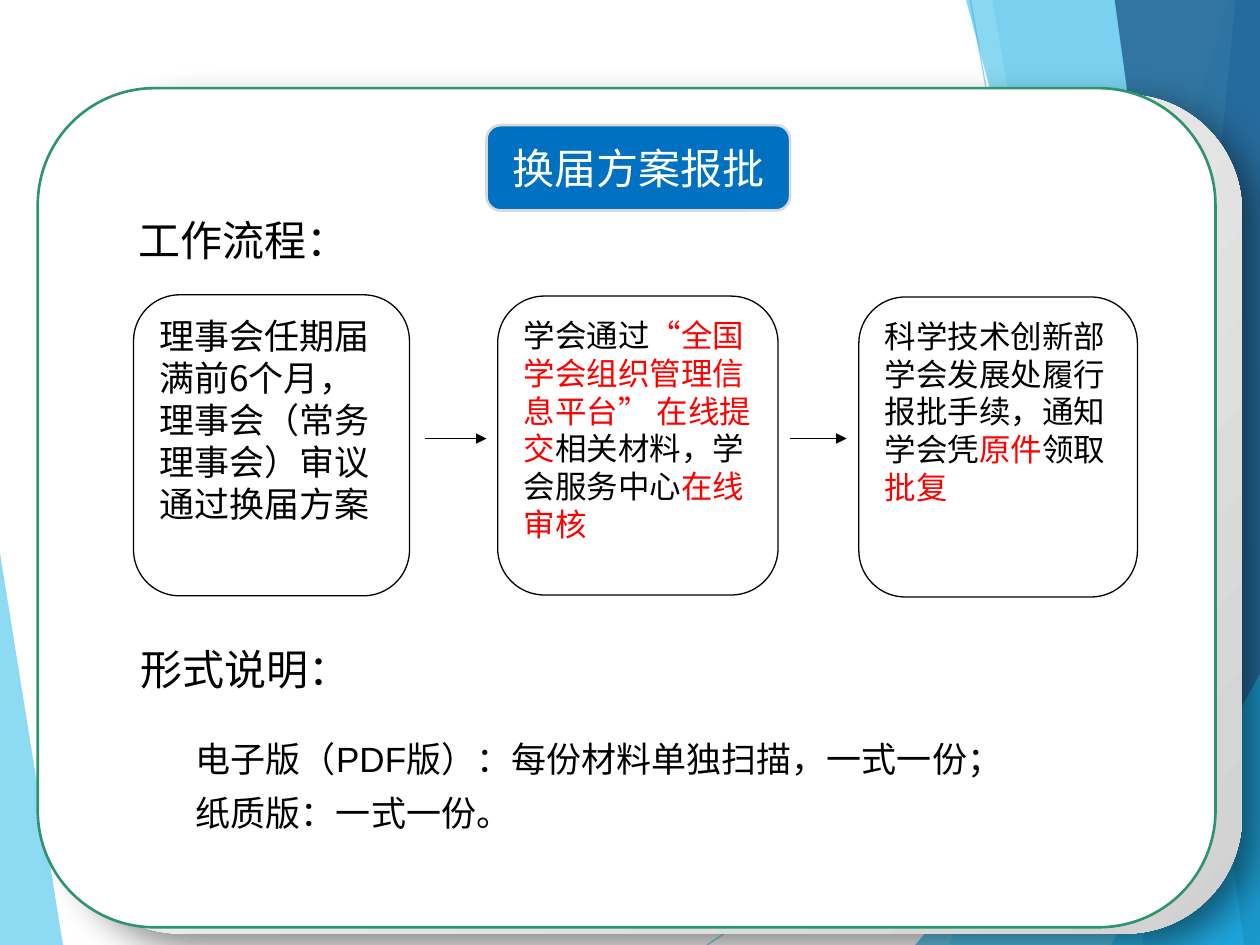
from lxml import etree
from pptx import Presentation
from pptx.dml.color import RGBColor
from pptx.enum.shapes import MSO_CONNECTOR, MSO_SHAPE
from pptx.enum.text import MSO_ANCHOR, MSO_AUTO_SIZE, PP_ALIGN
from pptx.oxml.ns import qn
from pptx.util import Pt

ROUND = MSO_SHAPE.ROUNDED_RECTANGLE
STEP = MSO_SHAPE.FLOWCHART_ALTERNATE_PROCESS
STRAIGHT = MSO_CONNECTOR.STRAIGHT
TOP, MIDDLE = MSO_ANCHOR.TOP, MSO_ANCHOR.MIDDLE
LEFT, CENTER = PP_ALIGN.LEFT, PP_ALIGN.CENTER
GROW = MSO_AUTO_SIZE.SHAPE_TO_FIT_TEXT

WHITE = RGBColor(0xFF, 0xFF, 0xFF)
BLACK = RGBColor(0x00, 0x00, 0x00)
RED = RGBColor(0xFF, 0x00, 0x00)
GREEN = RGBColor(0x2E, 0x94, 0x6B)
TITLE_BLUE = RGBColor(0x00, 0x70, 0xC0)
PALE_GRAY = RGBColor(0xD9, 0xD9, 0xD9)
EDGE_GRAY = RGBColor(0xD1, 0xD1, 0xD1)
SKY = RGBColor(0x5F, 0xCB, 0xEF)
CYAN = RGBColor(0x17, 0xB0, 0xE4)
BLUE = RGBColor(0x2E, 0x83, 0xC3)
NAVY = RGBColor(0x22, 0x62, 0x92)

ARIAL = "Arial"
CJK_SC = "Noto Sans CJK SC"
CJK_JP = "Noto Sans CJK JP"

FACETS = [
    ([(0, 316), (35.5, 540), (0, 540)], SKY, 70),
    ([(702, 0), (543, 540), (720, 540), (720, 0)], SKY, 36),
    ([(567, 0), (662, 540), (720, 540), (720, 0)], SKY, 20),
    ([(523, 540), (720, 309), (720, 540)], CYAN, 66),
    ([(552, 0), (698, 540), (720, 540), (720, 0)], CYAN, 50),
    ([(706, 0), (653, 540), (720, 540), (720, 0)], BLUE, 70),
    ([(637, 0), (711, 540), (720, 540), (720, 0)], NAVY, 82),
    ([(635, 540), (720, 385), (720, 540)], CYAN, 66),
]
RAYS = [((404, 540), (720, 329)), ((554.5, 0), (651, 540))]

STEPS = [
    ((76.3, 168.5, 157.7, 172), CJK_JP, 20,
     [("理事会任期届满前6个月，理事会（常务理事会）审议通过换届方案", BLACK)]),
    ((284.4, 169.2, 160.2, 170.8), ARIAL, 18,
     [("学会通过", BLACK), ("“全国学会组织管理信息平台” 在线提交", RED),
      ("相关材料，学会服务中心", BLACK), ("在线审核", RED)]),
    ((490.8, 169.7, 159.2, 171.4), CJK_JP, 18,
     [("科学技术创新部学会发展处履行报批手续，通知学会凭", BLACK),
      ("原件", RED), ("领取", BLACK), ("批复", RED)]),
]
ARROWS = [(242.6, 278), (451.6, 483.8)]
ARROW_Y = 250.6


class Deck:
    def __init__(self, prs):
        self.s = prs.slides.add_slide(prs.slide_layouts[6])

    def alpha(self, element, percent):
        color = next(element.iter(qn("a:srgbClr")))
        etree.SubElement(color, qn("a:alpha"), val=str(percent * 1000))

    def facet(self, points, color, opacity):
        builder = self.s.shapes.build_freeform(*points[0], scale=Pt(1))
        builder.add_line_segments(points[1:], close=True)
        sp = builder.convert_to_shape()
        sp.shadow.inherit = False
        sp.fill.solid()
        sp.fill.fore_color.rgb = color
        sp.line.fill.background()
        self.alpha(sp._element.spPr, opacity)

    def line(self, start, end, color, opacity=None, arrow=False):
        cxn = self.s.shapes.add_connector(
            STRAIGHT, *(Pt(v) for v in (*start, *end)))
        cxn.line.color.rgb = color
        cxn.line.width = Pt(0.75)
        props = cxn._element.spPr
        if opacity:
            self.alpha(props, opacity)
        if arrow:
            etree.SubElement(props.find(qn("a:ln")), qn("a:tailEnd"), type="triangle")
        etree.SubElement(props, qn("a:effectLst"))

    def shape(self, kind, box, fill, line=None, width=0.75, adj=None):
        sp = self.s.shapes.add_shape(kind, *(Pt(v) for v in box))
        sp.shadow.inherit = False
        if adj is not None:
            sp.adjustments[0] = adj
        sp.fill.solid()
        sp.fill.fore_color.rgb = fill
        if line is None:
            sp.line.fill.background()
        else:
            sp.line.color.rgb = line
            sp.line.width = Pt(width)
        return sp

    def backing(self, box, adj):
        sp = self.shape(ROUND, box, WHITE, adj=adj)
        sp.fill.gradient()
        sp.fill.gradient_angle = 315
        for stop, color, at in zip(sp.fill.gradient_stops, (WHITE, EDGE_GRAY), (0, 1)):
            stop.color.rgb = color
            stop.position = at
        effects = sp._element.spPr.find(qn("a:effectLst"))
        shadow = etree.SubElement(
            effects, qn("a:outerShdw"), blurRad=str(Pt(23)), dist=str(Pt(10)),
            dir="2700000", algn="tl", rotWithShape="0")
        etree.SubElement(shadow, qn("a:srgbClr"), val=str(BLACK))
        self.alpha(shadow, 50)

    def put_text(self, sp, paragraphs, font, size, align=LEFT, anchor=TOP,
                 spacing=None, indent=0):
        tf = sp.text_frame
        tf.word_wrap = True
        tf.vertical_anchor = anchor
        for i, runs in enumerate(paragraphs):
            p = tf.add_paragraph() if i else tf.paragraphs[0]
            p.alignment = align
            if spacing:
                p.line_spacing = spacing
            if indent:
                p._p.get_or_add_pPr().set("marL", str(Pt(indent)))
            for text, color in runs:
                r = p.add_run()
                r.text = text
                r.font.name = font
                r.font.size = Pt(size)
                r.font.color.rgb = color
                east = CJK_SC if font == ARIAL else font
                etree.SubElement(r._r.get_or_add_rPr(), qn("a:ea"), typeface=east)

    def text(self, box, lines, size, **style):
        sp = self.s.shapes.add_textbox(*(Pt(v) for v in box))
        self.put_text(sp, [[(line, BLACK)] for line in lines], ARIAL, size, **style)
        sp.text_frame.auto_size = GROW


def main():
    prs = Presentation()
    prs.slide_width, prs.slide_height = Pt(720), Pt(540)
    deck = Deck(prs)

    for ray in RAYS:
        deck.line(*ray, SKY, opacity=70)
    for facet in FACETS:
        deck.facet(*facet)

    deck.backing((36.7, 54, 673, 479.5), 0.139)
    deck.shape(ROUND, (21.6, 50.4, 673, 479.5), WHITE, GREEN, 1.5, 0.139)
    title = deck.shape(ROUND, (278, 71.5, 173.5, 48.8), TITLE_BLUE, PALE_GRAY, 1.5)
    deck.put_text(title, [[("换届方案报批", WHITE)]], CJK_SC, 24, CENTER, MIDDLE)

    deck.text((72, 118.8, 141.8, 36.7), ["工作流程："], 24)
    for box, font, size, runs in STEPS:
        sp = deck.shape(STEP, box, WHITE, BLACK)
        deck.put_text(sp, [runs], font, size)
    for x1, x2 in ARROWS:
        deck.line((x1, ARROW_Y), (x2, ARROW_Y), BLACK, arrow=True)

    deck.text((73.4, 364.3, 141.8, 36.7), ["形式说明："], 24)
    deck.text((87.8, 410.4, 526.3, 70.6),
              ["电子版（PDF版）：每份材料单独扫描，一式一份；", "纸质版：一式一份。"],
              20, spacing=1.3, indent=17)

    prs.save("out.pptx")


if __name__ == "__main__":
    main()
